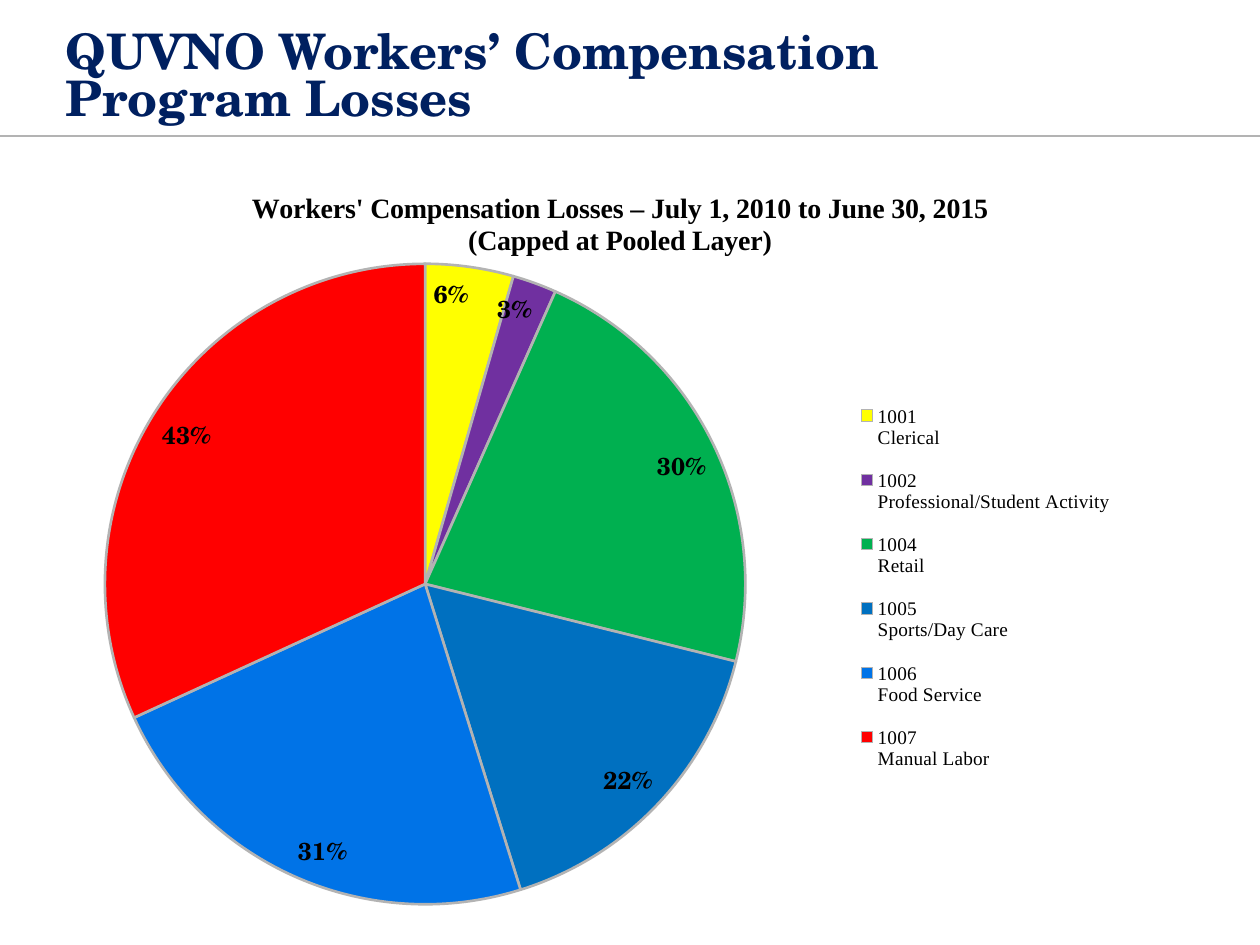
"""Build the workers' compensation losses slide with its pie chart."""
import dataclasses
import typing

import lxml.etree
import pptx
import pptx.chart.data
import pptx.dml.color
import pptx.enum.chart
import pptx.enum.text
import pptx.oxml.ns
import pptx.util

RGBColor = pptx.dml.color.RGBColor
NAVY = RGBColor(0x00, 0x20, 0x60)
BLACK = RGBColor(0x00, 0x00, 0x00)
GREY = RGBColor(0xB3, 0xB3, 0xB3)
YELLOW = RGBColor(0xFF, 0xFF, 0x00)
PURPLE = RGBColor(0x70, 0x30, 0xA0)
GREEN = RGBColor(0x00, 0xB0, 0x50)
TEAL_BLUE = RGBColor(0x00, 0x70, 0xC0)
BRIGHT_BLUE = RGBColor(0x00, 0x73, 0xE7)
RED = RGBColor(0xFF, 0x00, 0x00)

SCHOLA = "TeX Gyre Schola"
TIMES = "Times New Roman"
PX = 914400 // 126


@dataclasses.dataclass(frozen=True)
class LossClass:
    """A job class with its share of losses and slice colour."""
    code: int
    name: str
    share: float
    color: RGBColor


LOSS_CLASSES = [
    LossClass(1001, "Clerical", 0.06, YELLOW),
    LossClass(1002, "Professional/Student Activity", 0.03, PURPLE),
    LossClass(1004, "Retail", 0.30, GREEN),
    LossClass(1005, "Sports/Day Care", 0.22, TEAL_BLUE),
    LossClass(1006, "Food Service", 0.31, BRIGHT_BLUE),
    LossClass(1007, "Manual Labor", 0.43, RED),
]


def px(length: int) -> pptx.util.Emu:
    """Turn pixels into EMU."""
    return pptx.util.Emu(length * PX)


def style_font(font: typing.Any, *, size: int, name: str, color: RGBColor, bold: bool = False) -> None:
    """Set the look of a font."""
    font.size = pptx.util.Pt(size)
    font.name = name
    font.bold = bold
    font.color.rgb = color


def write_text(frame: typing.Any, text: str, *, size: int, name: str, color: RGBColor,
               bold: bool = False, line_spacing: float = 1.0) -> None:
    """Fill a text frame, one paragraph per line; a vertical tab is a line break."""
    frame.text = text
    for para in frame.paragraphs:
        para.line_spacing = line_spacing
        for span in para.runs:
            style_font(span.font, size=size, name=name, color=color, bold=bold)


def place(parent: typing.Any, after: str, **values: float) -> None:
    """Give a chart part a manual layout after the named child."""
    qn = pptx.oxml.ns.qn
    for old in parent.findall(qn("c:layout")):
        parent.remove(old)
    layout = lxml.etree.Element(qn("c:layout"))
    manual = lxml.etree.SubElement(layout, qn("c:manualLayout"))
    if after == "":
        lxml.etree.SubElement(manual, qn("c:layoutTarget")).set("val", "inner")
    for mode in ("xMode", "yMode"):
        lxml.etree.SubElement(manual, qn(f"c:{mode}")).set("val", "edge")
    for key, value in values.items():
        lxml.etree.SubElement(manual, qn(f"c:{key}")).set("val", str(value))
    if after:
        parent.find(qn(after)).addnext(layout)
    else:
        parent.insert(0, layout)


def add_heading(page: typing.Any) -> None:
    """Draw the slide heading and the rule below it."""
    rule = page.shapes.add_connector(pptx.enum.shapes.MSO_CONNECTOR.STRAIGHT, 0, px(136), px(1260), px(136))
    rule.line.color.rgb = GREY
    rule.line.width = pptx.util.Pt(0.75)
    lxml.etree.SubElement(rule._element.spPr, pptx.oxml.ns.qn("a:effectLst"))
    box = page.shapes.add_textbox(px(53), px(21), px(903), px(116))
    box.text_frame.word_wrap = True
    box.text_frame.vertical_anchor = pptx.enum.text.MSO_ANCHOR.MIDDLE
    write_text(box.text_frame, "QUVNO Workers’ Compensation\vProgram Losses",
               size=28, name=SCHOLA, color=NAVY, bold=True, line_spacing=0.8)


def add_losses_chart(page: typing.Any) -> None:
    """Draw the pie of losses by job class."""
    data = pptx.chart.data.CategoryChartData(number_format="0%")
    data.categories = [f"{item.code}\n{item.name}" for item in LOSS_CLASSES]
    data.add_series("Series 1", [item.share for item in LOSS_CLASSES])
    chart = page.shapes.add_chart(pptx.enum.chart.XL_CHART_TYPE.PIE,
                                  px(42), px(157), px(1144), px(756), data).chart
    style_font(chart.font, size=10, name=SCHOLA, color=GREY)

    write_text(chart.chart_title.text_frame,
               "Workers' Compensation Losses – July 1, 2010 to June 30, 2015\n(Capped at Pooled Layer)",
               size=16, name=TIMES, color=BLACK, bold=True)
    place(chart.chart_title._element, "c:tx", x=0.18, y=0.04)

    chart.has_legend = True
    chart.legend.position = pptx.enum.chart.XL_LEGEND_POSITION.RIGHT
    chart.legend.include_in_layout = False
    style_font(chart.legend.font, size=11, name=TIMES, color=BLACK)
    place(chart.legend._element, "c:legendPos", x=0.7, y=0.3, w=0.25, h=0.54)

    plot = chart.plots[0]
    plot.vary_by_categories = True
    place(plot._element.getparent(), "", x=0.055, y=0.141, w=0.56, h=0.848)
    for index, item in enumerate(LOSS_CLASSES):
        pie_slice = plot.series[0].points[index].format
        pie_slice.fill.solid()
        pie_slice.fill.fore_color.rgb = item.color
        pie_slice.line.color.rgb = GREY
        pie_slice.line.width = pptx.util.Pt(1.5)

    labels = plot.series[0].data_labels
    labels.show_value = True
    labels.number_format = "0%"
    labels.number_format_is_linked = False
    labels.position = pptx.enum.chart.XL_LABEL_POSITION.INSIDE_END
    style_font(labels.font, size=14, name=SCHOLA, color=BLACK, bold=True)


def main() -> None:
    """Build and save the deck."""
    deck = pptx.Presentation()
    deck.slide_width, deck.slide_height = px(1260), px(945)
    page = deck.slides.add_slide(deck.slide_layouts[6])
    add_heading(page)
    add_losses_chart(page)
    deck.save("out.pptx")


if __name__ == "__main__":
    main()
